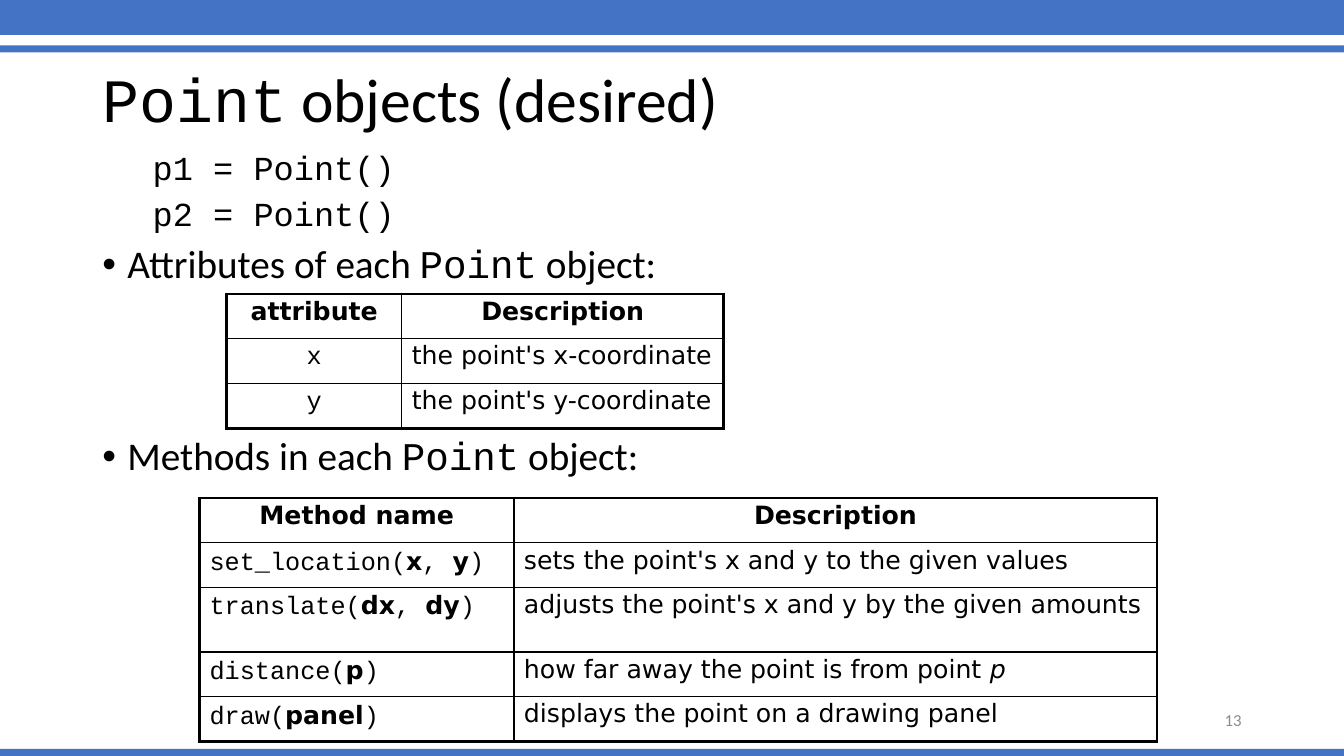
from pptx import Presentation
from pptx.dml.color import RGBColor as Color
from pptx.enum.shapes import MSO_SHAPE as Shape
from pptx.enum.text import MSO_ANCHOR as Anchor, PP_ALIGN as Align
from pptx.oxml import parse_xml as to_xml
from pptx.oxml.ns import nsdecls as spaces
from pptx.util import Pt

SANS, MONO, WIDE = "Calibri", "Courier New", "DejaVu Sans"
NS = spaces("a")


def paint(font, tint):
    font.color.rgb = Color.from_string(tint)


def write(par, parts, size, tint="000000"):
    par.line_spacing = 0.9
    for text, face, *marks in parts:
        run = par.add_run()
        run.text = text
        run.font.name = face
        run.font.size = Pt(size)
        run.font.bold = "b" in marks
        run.font.italic = "i" in marks
        paint(run.font, tint)


deck = Presentation()
deck.slide_width, deck.slide_height = Pt(960), Pt(540)
slide = deck.slides.add_slide(deck.slide_layouts[6])

for top, height in [(-2, 27), (32.4, 5), (535, 5)]:
    bar = slide.shapes.add_shape(Shape.RECTANGLE, 0, Pt(top), Pt(960), Pt(height))
    bar.shadow.inherit = False
    bar.fill.solid()
    paint_fill = bar.fill.fore_color
    paint_fill.rgb = Color.from_string("4472C4")
    bar.line.fill.background()

title = slide.shapes.add_textbox(Pt(66), Pt(21), Pt(828), Pt(104)).text_frame
title.word_wrap = True
title.vertical_anchor = Anchor.MIDDLE
write(title.paragraphs[0], [("Point", MONO), (" objects (desired)", SANS)], 44)

body = slide.shapes.add_textbox(Pt(66), Pt(108), Pt(828), Pt(378)).text_frame
body.word_wrap = True
body.margin_top = 0
lines = [
    ([("p1 = Point()", MONO)], 24, 0),
    ([("p2 = Point()", MONO)], 24, 7),
    ([("Attributes of each ", SANS), ("Point", MONO), (" object:", SANS)], 28, 8),
    ([("Methods in each ", SANS), ("Point", MONO), (" object:", SANS)], 28, 107),
]
for num, (parts, size, gap) in enumerate(lines):
    par = body.add_paragraph() if num else body.paragraphs[0]
    write(par, parts, size)
    par.space_before = Pt(gap)
    props = par._p.get_or_add_pPr()
    if size == 28:
        props.set("marL", str(Pt(18)))
        props.set("indent", str(Pt(-18)))
        props.append(to_xml(f'<a:buFont {NS} typeface="Arial"/>'))
        props.append(to_xml(f'<a:buChar {NS} char="•"/>'))
    else:
        props.set("marL", str(Pt(36)))

fields = [[[("attribute", WIDE, "b")], [("Description", WIDE, "b")]]]
for name in "xy":
    fields.append([[(name, MONO)], [(f"the point's {name}-coordinate", WIDE)]])

calls = [
    ("set_location", ["x", "y"], [("sets the point's x and y to the given values", WIDE)]),
    ("translate", ["dx", "dy"], [("adjusts the point's x and y by the given amounts", WIDE)]),
    ("distance", ["p"], [("how far away the point is from point ", WIDE), ("p", WIDE, "i")]),
    ("draw", ["panel"], [("displays the point on a drawing panel", WIDE)]),
]
methods = [[[("Method name", WIDE, "b")], [("Description", WIDE, "b")]]]
for name, args, note in calls:
    parts = [(name + "(", MONO)]
    for num, arg in enumerate(args):
        if num:
            parts.append((", ", MONO))
        parts.append((arg, WIDE, "b"))
    methods.append([parts + [(")", MONO)], note])

grids = [
    (142.5, 355.8, [224.6, 459.4], [32, 32, 46, 32, 32], methods, False),
    (162, 210, [125, 230], [32] * 3, fields, True),
]
for left, top, widths, heights, rows, center in grids:
    table = slide.shapes.add_table(len(rows), 2, Pt(left), Pt(top),
                                   Pt(sum(widths)), Pt(sum(heights))).table
    for col, width in zip(table.columns, widths):
        col.width = Pt(width)
    for row, height in zip(table.rows, heights):
        row.height = Pt(height)
    for r, row in enumerate(rows):
        for c, parts in enumerate(row):
            cell = table.cell(r, c)
            cell.margin_left = cell.margin_right = Pt(7.2)
            cell.margin_top = cell.margin_bottom = Pt(3.6)
            par = cell.text_frame.paragraphs[0]
            write(par, parts, 18)
            middle = r == 0 or (center and c == 0)
            par.alignment = Align.CENTER if middle else Align.LEFT
            props = cell._tc.get_or_add_tcPr()
            edges = {"L": c == 0, "R": c == 1, "T": r == 0, "B": r == len(rows) - 1}
            for side, outer in edges.items():
                width = Pt(2.25 if outer else 1)
                props.append(to_xml(
                    f'<a:ln{side} {NS} w="{width}"><a:solidFill>'
                    f'<a:srgbClr val="000000"/></a:solidFill></a:ln{side}>'))
            cell.fill.background()

page = slide.shapes.add_textbox(Pt(678), Pt(500.5), Pt(216), Pt(28.8)).text_frame
page.word_wrap = True
page.vertical_anchor = Anchor.MIDDLE
write(page.paragraphs[0], [("13", SANS)], 12, "8C8C8C")
page.paragraphs[0].alignment = Align.RIGHT

deck.save("out.pptx")
